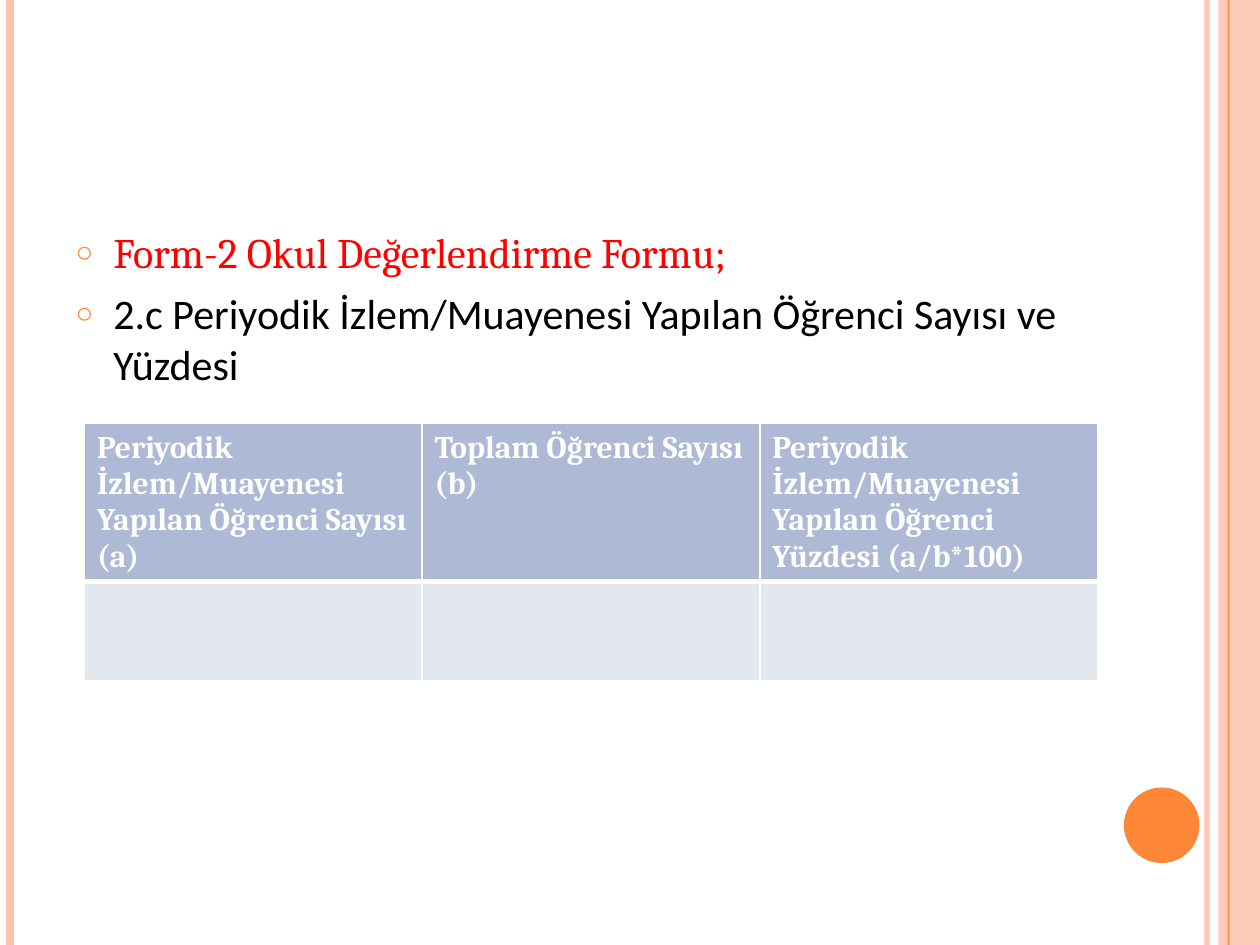
from lxml.etree import SubElement
from pptx import Presentation
from pptx.dml.color import RGBColor
from pptx.enum.shapes import MSO_CONNECTOR as Connector, MSO_SHAPE as Shape
from pptx.oxml.ns import qn
from pptx.util import Inches, Pt

ORANGE, PEACH, WHITE = "FE8637", "FEC3AE", "FFFFFF"
HEADER_FILL, ROW_FILL = "AEBAD5", "E3E7EF"
HEADINGS = [
    "Periyodik İzlem/Muayenesi Yapılan Öğrenci Sayısı (a)",
    "Toplam Öğrenci Sayısı (b)",
    "Periyodik İzlem/Muayenesi Yapılan Öğrenci Yüzdesi (a/b*100)",
]


def rgb(color):
    return RGBColor.from_string(color)


def set_alpha(fill, percent):
    """Make a solid fill partly transparent."""
    color = fill._xPr.find(qn("a:solidFill"))[0]
    SubElement(color, qn("a:alpha"), val=str(percent * 1000))


class FormSlide:
    def __init__(self, slide):
        self.slide = slide
        self.shapes = slide.shapes

    def rule(self, x, color, width, alpha=100):
        """Draw a full-height vertical line."""
        line = self.shapes.add_connector(
            Connector.STRAIGHT, Inches(x), 0, Inches(x), Inches(7.5))
        line.line.color.rgb = rgb(color)
        line.line.width = Pt(width)
        SubElement(line._element.spPr, qn("a:effectLst"))
        if alpha < 100:
            set_alpha(line.line.fill, alpha)

    def block(self, kind, box, color, alpha=100):
        block = self.shapes.add_shape(kind, *map(Inches, box))
        block.shadow.inherit = False
        block.fill.solid()
        block.fill.fore_color.rgb = rgb(color)
        block.line.fill.background()
        if alpha < 100:
            set_alpha(block.fill, alpha)

    def run(self, paragraph, text, size, font, color, bold=False):
        run = paragraph.add_run()
        run.text = text
        run.font.size = Pt(size)
        run.font.name = font
        run.font.bold = bold
        run.font.color.rgb = rgb(color)

    def bullets(self, box, items):
        body = self.slide.placeholders[1]
        body.left, body.top, body.width, body.height = map(Inches, box)
        frame = body.text_frame
        for i, (text, font, color) in enumerate(items):
            paragraph = frame.add_paragraph() if i else frame.paragraphs[0]
            paragraph.space_before = Pt(6)
            self.run(paragraph, text, 24, font, color)
            props = paragraph._p.get_or_add_pPr()
            props.set("marL", str(Inches(0.3)))
            props.set("indent", str(-Inches(0.3)))
            bullet_color = SubElement(props, qn("a:buClr"))
            SubElement(bullet_color, qn("a:srgbClr"), val=ORANGE)
            SubElement(props, qn("a:buSzPct"), val="70000")
            SubElement(props, qn("a:buChar"), char="○")

    def cell(self, cell, fill, top, bottom):
        """Give a cell white borders, then its fill."""
        props = cell._tc.get_or_add_tcPr()
        for side, width in (("L", 1), ("R", 1), ("T", top), ("B", bottom)):
            border = SubElement(props, qn("a:ln" + side), w=str(Pt(width)))
            solid = SubElement(border, qn("a:solidFill"))
            SubElement(solid, qn("a:srgbClr"), val=WHITE)
        cell.fill.solid()
        cell.fill.fore_color.rgb = rgb(fill)

    def form_table(self, headings, left, top, column_width, row_height):
        count = len(headings)
        table = self.shapes.add_table(
            2, count, Inches(left), Inches(top),
            Inches(column_width * count), Inches(row_height * 2)).table
        for i, heading in enumerate(headings):
            table.columns[i].width = Inches(column_width)
            header, entry = table.cell(0, i), table.cell(1, i)
            self.cell(header, HEADER_FILL, top=1, bottom=3)
            self.cell(entry, ROW_FILL, top=3, bottom=1)
            self.run(header.text_frame.paragraphs[0], heading,
                     18, "Cambria", WHITE, bold=True)


def main():
    deck = Presentation()
    deck.slide_width, deck.slide_height = Inches(10), Inches(7.5)
    slide = deck.slides.add_slide(deck.slide_layouts[1])
    title = slide.shapes.title._element
    title.getparent().remove(title)  # this slide has no title
    form = FormSlide(slide)

    # Side decoration
    form.rule(9.58, PEACH, 3, alpha=93)
    form.rule(0.08, PEACH, 4.5)
    form.rule(9.75, ORANGE, 1.5)
    form.block(Shape.RECTANGLE, (9.67, 0, 0.33, 7.5), PEACH, alpha=87)
    form.rule(9.75, ORANGE, 0.75)
    form.block(Shape.OVAL, (8.92, 6.25, 0.6, 0.6), ORANGE)

    # Form name and section
    form.bullets((0.5, 1.75, 8.17, 5.33), [
        ("Form-2 Okul Değerlendirme Formu;", "Cambria", "FF0000"),
        ("2.c Periyodik İzlem/Muayenesi Yapılan Öğrenci Sayısı ve Yüzdesi",
         "Calibri", "000000"),
    ])

    # Monitoring table
    form.form_table(HEADINGS, 0.67, 3.36, 2.68, 0.79)
    deck.save("out.pptx")


if __name__ == "__main__":
    main()
